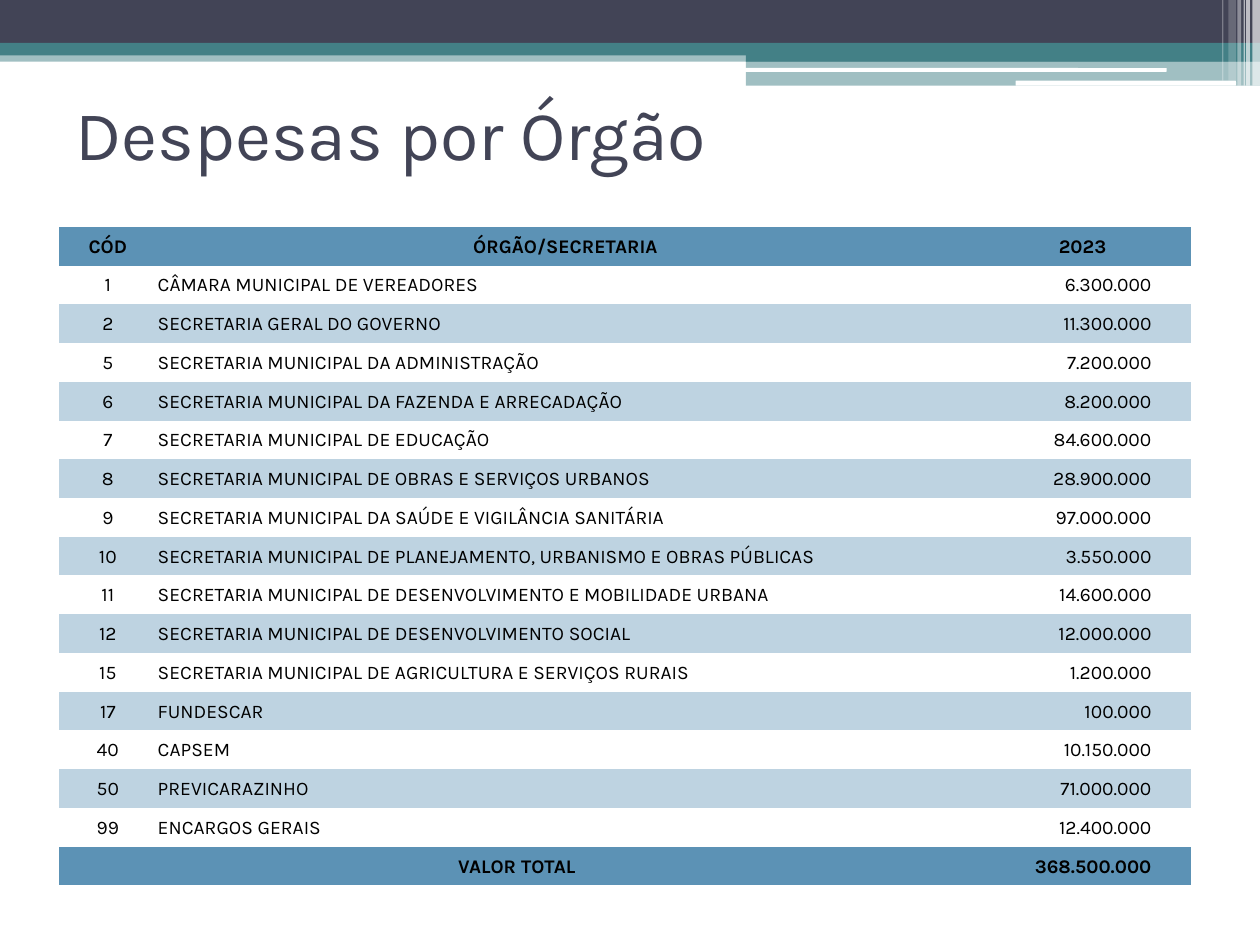
import pptx
import pptx.dml.color
import pptx.enum.shapes
import pptx.enum.text
import pptx.oxml
import pptx.oxml.ns
import pptx.util
from lxml import etree

FONT = "Karla"
DARK, TEAL, WHITE, BLACK = "424456", "438086", "FFFFFF", "000000"
BLUE, PALE = "5C92B5", "BED3E1"
PLAIN_TABLE_STYLE = "{2D5ABB26-0587-4C30-8999-92F81FD0307C}"
RECT = pptx.enum.shapes.MSO_SHAPE.RECTANGLE
ROUND = pptx.enum.shapes.MSO_SHAPE.ROUNDED_RECTANGLE
ALIGN = pptx.enum.text.PP_ALIGN
MIDDLE = pptx.enum.text.MSO_ANCHOR.MIDDLE

# Banner grid: 1000 columns by 68 rows.
BANNER_GRID = (1000, 68)
BANNER_PARTS = [  # outline, column, row, columns, rows, colour, opacity %
    (RECT, 0, 40, 1000, 9, TEAL, 50),
    (RECT, 0, 0, 1000, 34, DARK, 100),
    (RECT, 0, 34, 1000, 10, TEAL, 100),
    (RECT, 592, 39, 408, 10, TEAL, 100),
    (RECT, 592, 48, 408, 20, TEAL, 50),
    (ROUND, 591, 54, 335, 3, WHITE, 100),
    (ROUND, 806, 64, 175, 4, WHITE, 100),
    (RECT, 994, 0, 6, 68, WHITE, 65),
    (RECT, 989, 0, 3, 68, WHITE, 65),
    (RECT, 987, 0, 1, 68, WHITE, 60),
    (RECT, 982, 0, 3, 68, WHITE, 40),
    (RECT, 975, 0, 6, 64, WHITE, 20),
    (RECT, 970, 0, 1, 64, WHITE, 30),
]

HEADINGS = ("CÓD", "ÓRGÃO/SECRETARIA", "2023")
EXPENSES = [
    ("1", "CÂMARA MUNICIPAL DE VEREADORES", "6.300.000"),
    ("2", "SECRETARIA GERAL DO GOVERNO", "11.300.000"),
    ("5", "SECRETARIA MUNICIPAL DA ADMINISTRAÇÃO", "7.200.000"),
    ("6", "SECRETARIA MUNICIPAL DA FAZENDA E ARRECADAÇÃO", "8.200.000"),
    ("7", "SECRETARIA MUNICIPAL DE EDUCAÇÃO", "84.600.000"),
    ("8", "SECRETARIA MUNICIPAL DE OBRAS E SERVIÇOS URBANOS", "28.900.000"),
    ("9", "SECRETARIA MUNICIPAL DA SAÚDE E VIGILÂNCIA SANITÁRIA", "97.000.000"),
    ("10", "SECRETARIA MUNICIPAL DE PLANEJAMENTO, URBANISMO E OBRAS PÚBLICAS",
     "3.550.000"),
    ("11", "SECRETARIA MUNICIPAL DE DESENVOLVIMENTO E MOBILIDADE URBANA",
     "14.600.000"),
    ("12", "SECRETARIA MUNICIPAL DE DESENVOLVIMENTO SOCIAL", "12.000.000"),
    ("15", "SECRETARIA MUNICIPAL DE AGRICULTURA E SERVIÇOS RURAIS", "1.200.000"),
    ("17", "FUNDESCAR", "100.000"),
    ("40", "CAPSEM", "10.150.000"),
    ("50", "PREVICARAZINHO", "71.000.000"),
    ("99", "ENCARGOS GERAIS", "12.400.000"),
]
TOTAL = ("VALOR TOTAL", "", "368.500.000")
COLUMN_SHARES = (0.086, 0.723, 0.191)
BODY_ALIGN = (ALIGN.CENTER, ALIGN.LEFT, ALIGN.RIGHT)
VALUE_INSET = 0.31


def color(code):
    return pptx.dml.color.RGBColor.from_string(code)


def inches(*lengths):
    return [pptx.util.Inches(length) for length in lengths]


def style(para, size, code, align, bold=False):
    para.alignment = align
    para.font.name, para.font.size = FONT, pptx.util.Pt(size)
    para.font.bold, para.font.color.rgb = bold, color(code)


def set_opacity(shape, percent):
    tone = shape.fill._xPr.find(".//" + pptx.oxml.ns.qn("a:srgbClr"))
    alpha = etree.SubElement(tone, pptx.oxml.ns.qn("a:alpha"))
    alpha.set("val", str(percent * 1000))


def add_banner(page, left, top, width, height):
    step_x, step_y = width / BANNER_GRID[0], height / BANNER_GRID[1]
    for outline, column, row, columns, rows, code, opacity in BANNER_PARTS:
        part = page.shapes.add_shape(outline, *inches(
            left + column * step_x, top + row * step_y,
            columns * step_x, rows * step_y))
        part.shadow.inherit = False
        part.line.fill.background()
        part.fill.solid()
        part.fill.fore_color.rgb = color(code)
        if opacity < 100:
            set_opacity(part, opacity)


def place_title(page, text, left, top, width, height):
    title = page.shapes.title
    title.left, title.top, title.width, title.height = inches(
        left, top, width, height)
    title.text_frame.text = text
    title.text_frame.vertical_anchor = MIDDLE
    style(title.text_frame.paragraphs[0], 40, DARK, ALIGN.LEFT)
    title.element.getparent().append(title.element)  # in front of the banner


def fill_cell(cell, text, align, band, bold):
    cell.text = text
    cell.vertical_anchor = MIDDLE
    cell.margin_left, cell.margin_top, cell.margin_bottom = inches(0.01, 0.01, 0)
    cell.margin_right = pptx.util.Inches(
        VALUE_INSET if align == ALIGN.RIGHT else 0.01)
    style(cell.text_frame.paragraphs[0], 11, BLACK, align, bold)
    if band:
        cell.fill.solid()
        cell.fill.fore_color.rgb = color(band)
    else:
        cell.fill.background()


def add_expense_table(page, left, top, width, height):
    rows = [HEADINGS, *EXPENSES, TOTAL]
    last = len(rows) - 1
    frame = page.shapes.add_table(len(rows), len(HEADINGS),
                                  *inches(left, top, width, height))
    style_id = next(frame.element.iter(pptx.oxml.ns.qn("a:tableStyleId")))
    style_id.text = PLAIN_TABLE_STYLE
    table = frame.table
    for column, share in zip(table.columns, COLUMN_SHARES):
        column.width = pptx.util.Inches(width * share)
    table.cell(last, 0).merge(table.cell(last, 1))
    for index, texts in enumerate(rows):
        table.rows[index].height = pptx.util.Inches(height / len(rows))
        strong = index in (0, last)
        band = BLUE if strong else PALE if index % 2 == 0 else None
        for column, text in enumerate(texts):
            cell = table.cell(index, column)
            if cell.is_spanned:
                continue
            align = ALIGN.CENTER if index == 0 else BODY_ALIGN[column]
            fill_cell(cell, text, align, band, strong)


def main():
    deck = pptx.Presentation()
    deck.slide_width, deck.slide_height = inches(10, 7.5)
    page = deck.slides.add_slide(deck.slide_layouts.get_by_name("Title Only"))
    add_banner(page, 0, 0, 10, 0.68)
    place_title(page, "Despesas por Órgão", 0.5, 0.47, 9, 1.17)
    add_expense_table(page, 0.47, 1.8, 8.98, 5.23)
    deck.save("out.pptx")


if __name__ == "__main__":
    main()
